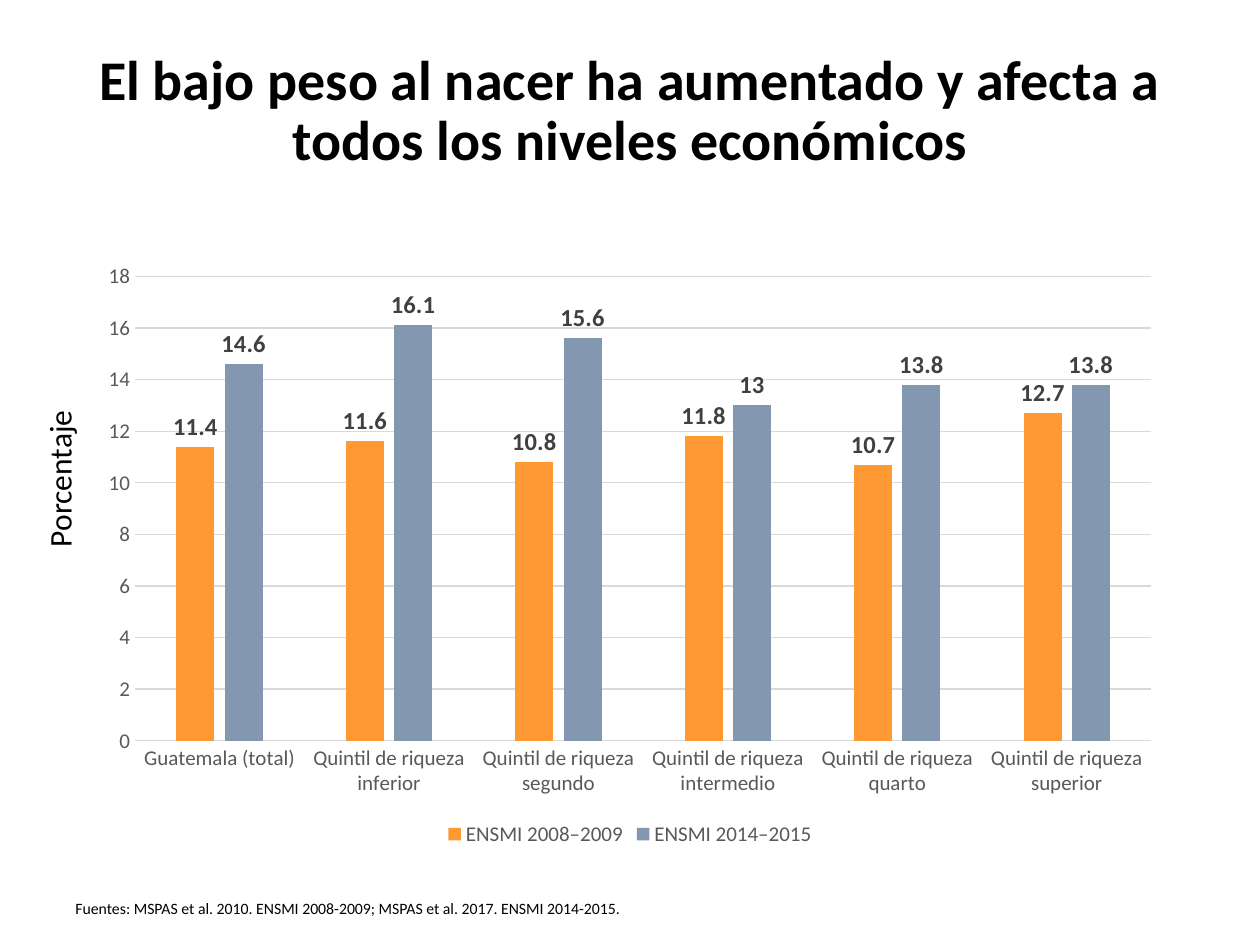
from dataclasses import dataclass

from pptx import Presentation
from pptx.chart.data import CategoryChartData
from pptx.dml.color import RGBColor
from pptx.enum.chart import XL_CHART_TYPE, XL_LABEL_POSITION, XL_LEGEND_POSITION, XL_TICK_MARK
from pptx.enum.text import MSO_ANCHOR, MSO_AUTO_SIZE, PP_ALIGN
from pptx.util import Pt


@dataclass(frozen=True)
class Theme:
    """Fonts, type sizes and colours of the slide."""
    font: str = "Calibri"
    title_size: int = 32
    label_size: int = 18
    value_size: int = 14
    axis_size: int = 12
    base_size: int = 10
    source_size: int = 9
    black: str = "000000"
    axis_text: str = "595959"
    value_text: str = "404040"
    grid: str = "D9D9D9"
    series: tuple = ("FF9933", "8497B0")


THEME = Theme()
QUINTILES = ("inferior", "segundo", "intermedio", "quarto", "superior")
CATEGORIES = ["Guatemala (total)"] + [f"Quintil de riqueza {name}" for name in QUINTILES]
SURVEYS = {
    "ENSMI 2008–2009": (11.4, 11.6, 10.8, 11.8, 10.7, 12.7),
    "ENSMI 2014–2015": (14.6, 16.1, 15.6, 13, 13.8, 13.8),
}


def style_font(font, size, color, bold=False):
    """Apply the theme typeface with a size, colour and weight."""
    font.name = THEME.font
    font.size = Pt(size)
    font.bold = bold
    font.color.rgb = RGBColor.from_string(color)


def style_line(line, color):
    """Apply a thin solid line."""
    line.color.rgb = RGBColor.from_string(color)
    line.width = Pt(0.75)


def add_text(slide, text, left, top, width, height, *, size, bold=False, wrap=True,
             grow=True, align=PP_ALIGN.LEFT, anchor=MSO_ANCHOR.TOP,
             spacing=1.0, bottom=3.6, rotation=0):
    """Add a one-paragraph text box, measured in points."""
    shape = slide.shapes.add_textbox(Pt(left), Pt(top), Pt(width), Pt(height))
    shape.rotation = rotation
    frame = shape.text_frame
    frame.word_wrap = wrap
    frame.auto_size = MSO_AUTO_SIZE.SHAPE_TO_FIT_TEXT if grow else MSO_AUTO_SIZE.NONE
    frame.vertical_anchor = anchor
    frame.margin_bottom = Pt(bottom)
    paragraph = frame.paragraphs[0]
    paragraph.alignment = align
    paragraph.line_spacing = spacing
    run = paragraph.add_run()
    run.text = text
    style_font(run.font, size, THEME.black, bold)
    return shape


def style_axis(axis):
    """Remove tick marks and set the axis label font."""
    axis.major_tick_mark = XL_TICK_MARK.NONE
    axis.minor_tick_mark = XL_TICK_MARK.NONE
    style_font(axis.tick_labels.font, THEME.axis_size, THEME.axis_text)


def style_series(series, color):
    """Fill the columns and show their values above them."""
    series.format.fill.solid()
    series.format.fill.fore_color.rgb = RGBColor.from_string(color)
    series.invert_if_negative = False
    labels = series.data_labels
    labels.show_value = True
    labels.position = XL_LABEL_POSITION.OUTSIDE_END
    style_font(labels.font, THEME.value_size, THEME.value_text, bold=True)


def add_column_chart(slide, left, top, width, height):
    """Add the clustered columns that compare the two surveys."""
    data = CategoryChartData()
    data.categories = CATEGORIES
    for name, values in SURVEYS.items():
        data.add_series(name, values)
    chart = slide.shapes.add_chart(XL_CHART_TYPE.COLUMN_CLUSTERED, Pt(left), Pt(top),
                                   Pt(width), Pt(height), data).chart
    chart.has_title = False
    style_font(chart.font, THEME.base_size, THEME.black)
    plot = chart.plots[0]
    plot.vary_by_categories = False
    plot.gap_width = 219
    plot.overlap = -27
    for series, color in zip(plot.series, THEME.series):
        style_series(series, color)

    style_axis(chart.category_axis)
    style_line(chart.category_axis.format.line, THEME.grid)
    value_axis = chart.value_axis
    style_axis(value_axis)
    value_axis.format.line.fill.background()
    value_axis.minimum_scale, value_axis.maximum_scale, value_axis.major_unit = 0, 18, 2
    value_axis.has_major_gridlines = True
    style_line(value_axis.major_gridlines.format.line, THEME.grid)

    chart.has_legend = True
    chart.legend.position = XL_LEGEND_POSITION.BOTTOM
    chart.legend.include_in_layout = False
    style_font(chart.legend.font, THEME.axis_size, THEME.axis_text)


def main():
    """Build and save the slide."""
    presentation = Presentation()
    presentation.slide_width, presentation.slide_height = Pt(720), Pt(540)
    slide = presentation.slides.add_slide(presentation.slide_layouts[6])
    add_text(slide, "El bajo peso al nacer ha aumentado y afecta a todos los niveles económicos",
             36, 21.6, 648, 120.24, size=THEME.title_size, bold=True, grow=False,
             align=PP_ALIGN.CENTER, anchor=MSO_ANCHOR.MIDDLE, spacing=0.9, bottom=38.8)
    add_column_chart(slide, 49.68, 144, 620.64, 342.72)
    add_text(slide, "Fuentes: MSPAS et al. 2010. ENSMI 2008-2009; MSPAS et al. 2017. ENSMI 2014-2015.",
             36, 509.76, 339.12, 18, size=THEME.source_size, wrap=False)
    add_text(slide, "Porcentaje", -56.88, 214.56, 181.44, 28.8,
             size=THEME.label_size, rotation=270)
    presentation.save("out.pptx")


if __name__ == "__main__":
    main()
